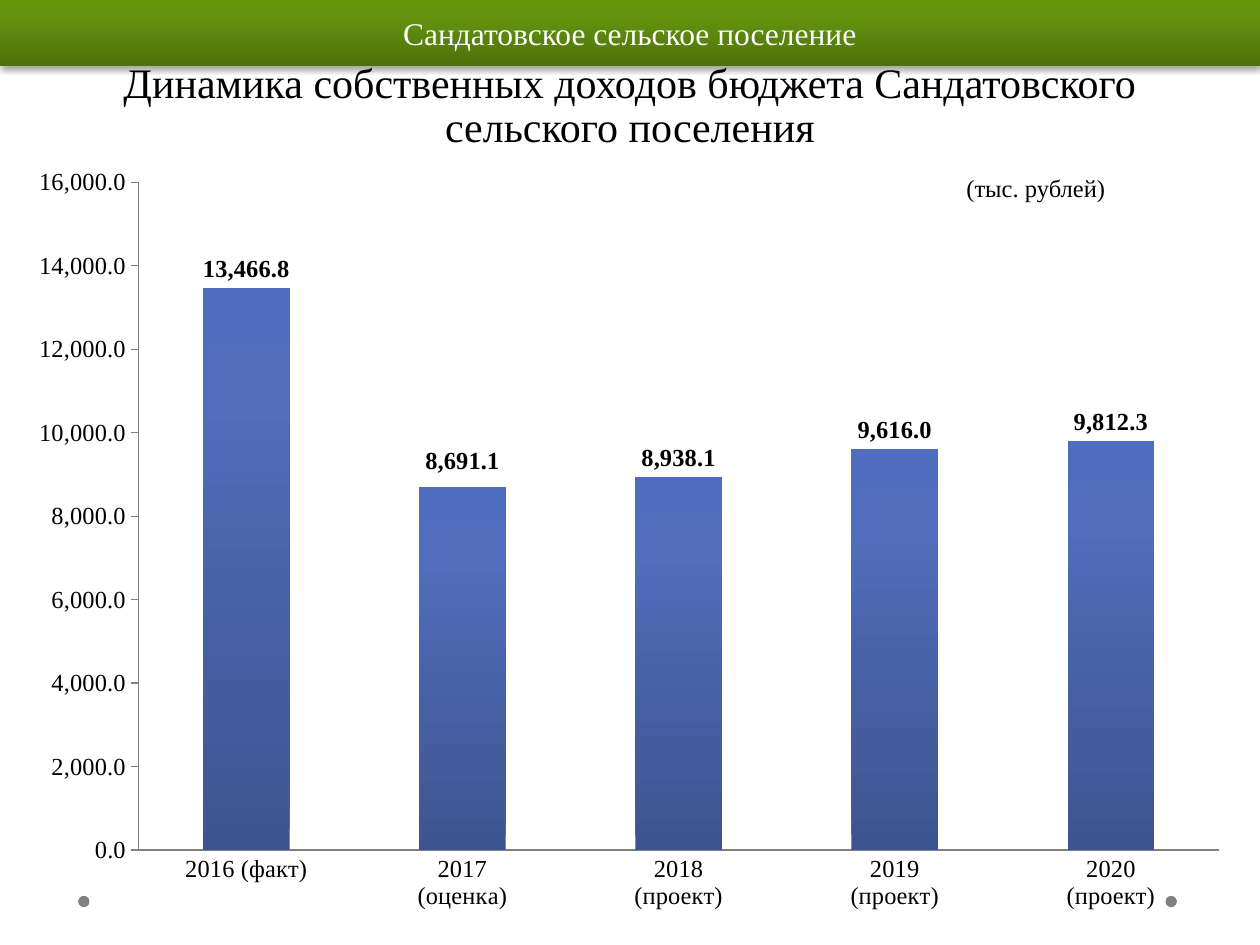
from lxml import etree
from pptx import Presentation
from pptx.chart.data import CategoryChartData
from pptx.dml.color import RGBColor
from pptx.enum.chart import XL_CHART_TYPE, XL_LABEL_POSITION, XL_TICK_MARK
from pptx.enum.shapes import MSO_SHAPE
from pptx.enum.text import MSO_ANCHOR, PP_ALIGN
from pptx.oxml.ns import qn
from pptx.util import Inches, Pt

COLUMNS = XL_CHART_TYPE.COLUMN_CLUSTERED
ABOVE_BAR = XL_LABEL_POSITION.OUTSIDE_END
TICK_OUTSIDE, TICK_NONE = XL_TICK_MARK.OUTSIDE, XL_TICK_MARK.NONE
RECTANGLE, OVAL = MSO_SHAPE.RECTANGLE, MSO_SHAPE.OVAL
TOP, MIDDLE, BOTTOM = MSO_ANCHOR.TOP, MSO_ANCHOR.MIDDLE, MSO_ANCHOR.BOTTOM
LEFT, CENTER = PP_ALIGN.LEFT, PP_ALIGN.CENTER

BLACK = RGBColor(0x00, 0x00, 0x00)
WHITE = RGBColor(0xFF, 0xFF, 0xFF)
GRAY = RGBColor(0x80, 0x80, 0x80)
GREENS = (RGBColor(0x4D, 0x72, 0x0B), RGBColor(0x64, 0x94, 0x0F), RGBColor(0x65, 0x97, 0x0C))
BLUES = (RGBColor(0x3E, 0x54, 0x90), RGBColor(0x51, 0x6D, 0xBB), RGBColor(0x4F, 0x6C, 0xBE))

FONT = "Times New Roman"
NUMBER_FORMAT = "#,##0.0"
WIDTH, HEIGHT = Inches(10), Inches(7.5)

INCOME = {
    "2016 (факт)": 13466.8,
    "2017\n(оценка)": 8691.1,
    "2018\n(проект)": 8938.1,
    "2019\n(проект)": 9616.0,
    "2020\n(проект)": 9812.3,
}


def share(box, x, y, w, h):
    left, top, width, height = box
    return (int(left + x * width), int(top + y * height), int(w * width), int(h * height))


def style_font(font, size, color=BLACK, bold=False):
    font.name, font.size, font.bold = FONT, Pt(size), bold
    font.color.rgb = color


def fill_upward(owner, fill, colors):
    fill.gradient()
    fill.gradient_angle = 90
    stops = owner.find(".//" + qn("a:gsLst"))
    stops.clear()
    for position, color in zip((0, 80, 100), colors):
        stop = etree.SubElement(stops, qn("a:gs"), pos=str(position * 1000))
        etree.SubElement(stop, qn("a:srgbClr"), val=str(color))


def add_shadow(shape):
    shape.shadow.inherit = False
    effects = shape._element.spPr.find(qn("a:effectLst"))
    shadow = etree.SubElement(effects, qn("a:outerShdw"), blurRad=str(Pt(3.1)),
                              dist=str(Pt(1.8)), dir="5400000", rotWithShape="0")
    color = etree.SubElement(shadow, qn("a:srgbClr"), val=str(BLACK))
    etree.SubElement(color, qn("a:alpha"), val="35000")


def write_text(shape, text, size, color=BLACK, align=CENTER, anchor=MIDDLE):
    frame = shape.text_frame
    frame.word_wrap, frame.vertical_anchor = True, anchor
    paragraph = frame.paragraphs[0]
    paragraph.text, paragraph.alignment = text, align
    style_font(paragraph.font, size, color)
    return paragraph


def add_header(slide, box):
    band = slide.shapes.add_shape(RECTANGLE, *box)
    band.line.fill.background()
    fill_upward(band._element, band.fill, GREENS)
    add_shadow(band)
    write_text(band, "Сандатовское сельское поселение", 18, WHITE)


def add_title(slide, box):
    title = slide.shapes.add_textbox(*box)
    heading = write_text(
        title, "Динамика собственных доходов бюджета Сандатовского сельского поселения",
        24, anchor=BOTTOM)
    heading.line_spacing = Pt(25)


def add_footer_dots(slide, box):
    diameter = Inches(0.09)
    left, top, width, _ = box
    for x in (left, left + width - diameter):
        dot = slide.shapes.add_shape(OVAL, x, top, diameter, diameter)
        dot.shadow.inherit = False
        dot.fill.solid()
        dot.fill.fore_color.rgb = GRAY
        dot.line.fill.background()


def add_layout(parent, index, **values):
    layout = etree.Element(qn("c:layout"))
    manual = etree.SubElement(layout, qn("c:manualLayout"))
    for key, value in values.items():
        etree.SubElement(manual, qn("c:" + key), val=str(value))
    for old in parent.findall(qn("c:layout")):
        parent.remove(old)
    parent.insert(index, layout)


def style_axes(chart):
    years, amounts = chart.category_axis, chart.value_axis
    for axis, tick in ((years, TICK_NONE), (amounts, TICK_OUTSIDE)):
        axis.major_tick_mark, axis.minor_tick_mark = tick, TICK_NONE
        axis.has_major_gridlines = False
        axis.format.line.color.rgb = GRAY
        axis.format.line.width = Pt(0.75)
        style_font(axis.tick_labels.font, 14)
    amounts.minimum_scale, amounts.maximum_scale, amounts.major_unit = 0, 16000, 2000
    amounts.tick_labels.number_format = NUMBER_FORMAT
    amounts.tick_labels.number_format_is_linked = False


def style_columns(chart):
    plot = chart.plots[0]
    plot.gap_width, plot.vary_by_categories = 150, False
    income = plot.series[0]
    fill_upward(income._element, income.format.fill, BLUES)
    labels = income.data_labels
    labels.show_value, labels.position = True, ABOVE_BAR
    labels.number_format, labels.number_format_is_linked = NUMBER_FORMAT, False
    style_font(labels.font, 14, bold=True)
    estimate = income.points[1].data_label
    estimate.position = ABOVE_BAR
    style_font(estimate.font, 14, bold=True)
    add_layout(income._element.find(".//" + qn("c:dLbl")), 1, x=0.0, y=-0.01)


def add_income_chart(slide, box):
    data = CategoryChartData(number_format=NUMBER_FORMAT)
    data.categories = list(INCOME)
    data.add_series(" ", list(INCOME.values()))
    chart = slide.shapes.add_chart(COLUMNS, *box, data).chart
    chart.has_title = chart.has_legend = False
    style_font(chart.font, 14)
    style_axes(chart)
    style_columns(chart)
    plot_area = chart._chartSpace.find(".//" + qn("c:plotArea"))
    add_layout(plot_area, 0, layoutTarget="inner", xMode="edge", yMode="edge",
               x=0.08, y=0.02, w=0.92, h=0.88)
    unit = slide.shapes.add_textbox(*share(box, 0.775, 0, 0.16, 0.055))
    write_text(unit, "(тыс. рублей)", 14, align=LEFT, anchor=TOP)


def main():
    presentation = Presentation()
    presentation.slide_width, presentation.slide_height = WIDTH, HEIGHT
    slide = presentation.slides.add_slide(presentation.slide_layouts[6])
    page = (0, 0, WIDTH, HEIGHT)
    add_footer_dots(slide, share(page, 0.062, 0.948, 0.872, 0.012))
    add_title(slide, share(page, 0.05, 0.096, 0.9, 0.07))
    add_income_chart(slide, share(page, 0.031, 0.177, 0.937, 0.803))
    add_header(slide, share(page, 0, 0, 1, 0.07))
    presentation.save("out.pptx")


if __name__ == "__main__":
    main()
